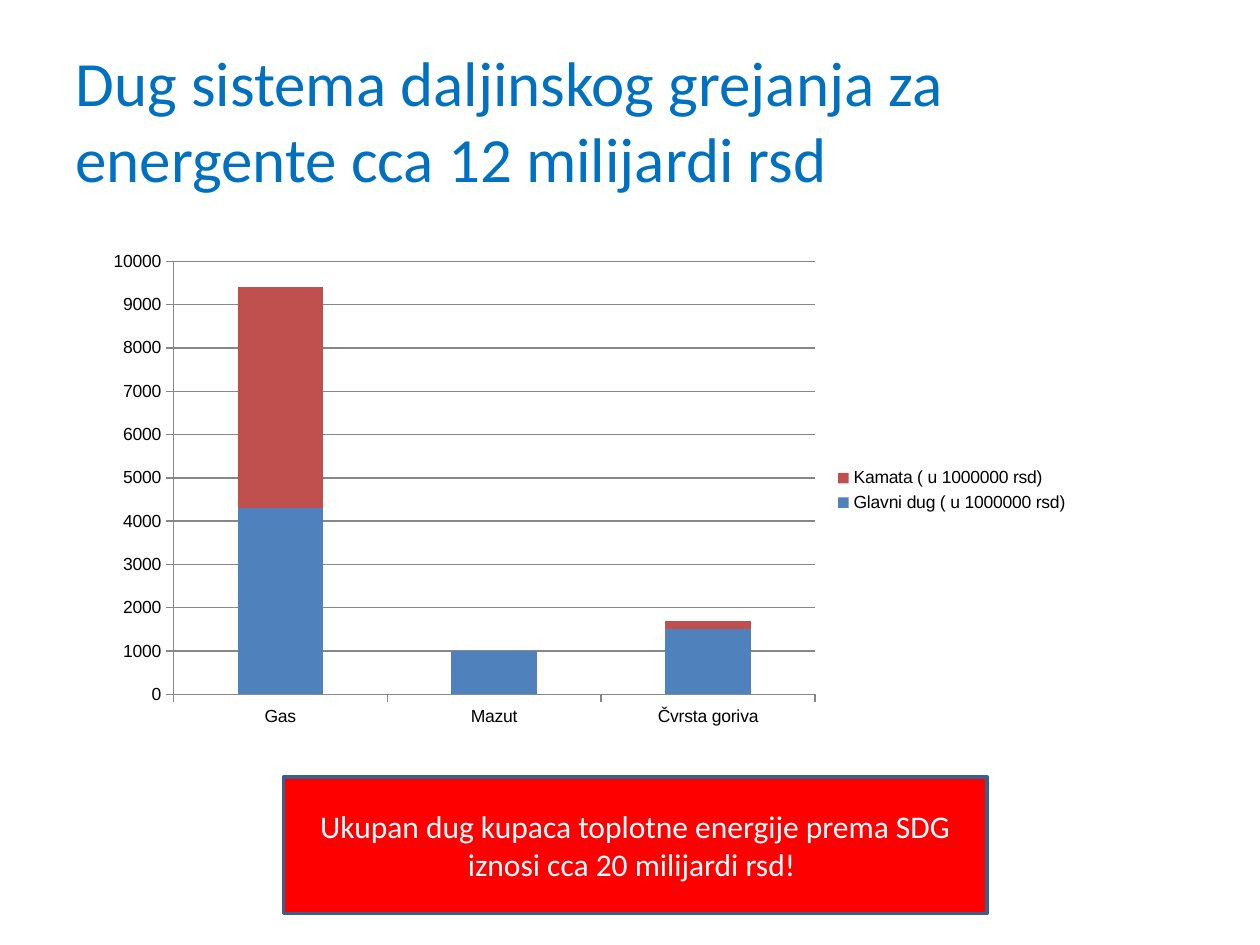
import pptx
import pptx.chart.data
import pptx.dml.color
import pptx.enum.chart
import pptx.enum.shapes
import pptx.enum.text
import pptx.oxml
import pptx.oxml.ns
import pptx.util

Pt = pptx.util.Pt
ALIGN = pptx.enum.text.PP_ALIGN
MIDDLE = pptx.enum.text.MSO_ANCHOR.MIDDLE
XL = pptx.enum.chart


def color(value):
    return pptx.dml.color.RGBColor.from_string(value)


def apply(target, values):
    for name, value in values.items():
        setattr(target, name, value)


class SlideBuilder:
    font = "Calibri"
    chart_font = "Arial"
    axis_color = "878787"
    frame = {"word_wrap": True, "vertical_anchor": MIDDLE,
             "margin_left": Pt(7.2), "margin_right": Pt(7.2),
             "margin_top": Pt(3.6), "margin_bottom": Pt(3.6)}

    def __init__(self, prs):
        self.s = prs.slides.add_slide(prs.slide_layouts[6])

    def set_text(self, sp, text, size, fill, align):
        tf = sp.text_frame
        apply(tf, self.frame)
        p = tf.paragraphs[0]
        p.alignment = align
        r = p.add_run()
        r.text = text
        apply(r.font, {"name": self.font, "size": Pt(size)})
        r.font.color.rgb = color(fill)

    def title(self, box, text, size, fill):
        sp = self.s.shapes.add_textbox(*map(Pt, box))
        self.set_text(sp, text, size, fill, ALIGN.LEFT)

    def callout(self, box, text, size, fill, line):
        sp = self.s.shapes.add_shape(
            pptx.enum.shapes.MSO_SHAPE.RECTANGLE, *map(Pt, box))
        sp.shadow.inherit = False
        sp.fill.solid()
        sp.fill.fore_color.rgb = color(fill)
        self.line(sp.line, line, 2)
        self.set_text(sp, text, size, "FFFFFF", ALIGN.CENTER)

    def line(self, line, value, width):
        line.color.rgb = color(value)
        line.width = Pt(width)

    def stacked_chart(self, box, categories, series, plot_area):
        data = pptx.chart.data.CategoryChartData()
        data.categories = categories
        for name, values, _ in series:
            data.add_series(name, values)
        chart = self.s.shapes.add_chart(
            XL.XL_CHART_TYPE.COLUMN_STACKED, *map(Pt, box), data).chart
        apply(chart, {"has_title": False, "has_legend": True})
        apply(chart.font, {"name": self.chart_font, "size": Pt(10)})
        chart.font.color.rgb = color("000000")
        apply(chart.legend, {"position": XL.XL_LEGEND_POSITION.RIGHT,
                             "include_in_layout": True})
        plot = chart.plots[0]
        apply(plot, {"gap_width": 150, "overlap": 100,
                     "vary_by_categories": False})
        for ser, (_, _, fill) in zip(plot.series, series):
            ser.format.fill.solid()
            ser.format.fill.fore_color.rgb = color(fill)
        for axis in (chart.category_axis, chart.value_axis):
            axis.major_tick_mark = XL.XL_TICK_MARK.OUTSIDE
            self.line(axis.format.line, self.axis_color, 0.75)
        apply(chart.value_axis, {"minimum_scale": 0, "maximum_scale": 10000,
                                 "major_unit": 1000,
                                 "has_major_gridlines": True})
        self.line(chart.value_axis.major_gridlines.format.line,
                  self.axis_color, 0.75)
        self.place_plot(chart, plot_area)

    def place_plot(self, chart, plot_area):
        parts = [("layoutTarget", "inner"), ("xMode", "edge"),
                 ("yMode", "edge"), *zip("xywh", plot_area)]
        inner = "".join(f'<c:{tag} val="{val}"/>' for tag, val in parts)
        layout = pptx.oxml.parse_xml(
            f'<c:layout {pptx.oxml.ns.nsdecls("c")}>'
            f"<c:manualLayout>{inner}</c:manualLayout></c:layout>")
        area = chart.element.chart.plotArea if hasattr(chart, "element") \
            else chart.plots[0]._element.getparent()
        for old in area.findall(pptx.oxml.ns.qn("c:layout")):
            area.remove(old)
        area.insert(0, layout)


def main():
    prs = pptx.Presentation()
    apply(prs, {"slide_width": Pt(720), "slide_height": Pt(540)})
    s = SlideBuilder(prs)
    s.title((36, 23, 648, 90),
            "Dug sistema daljinskog grejanja za energente cca 12 milijardi rsd",
            36, "0070C0")
    s.stacked_chart(
        (54, 138, 564, 284.5),
        ("Gas", "Mazut", "Čvrsta goriva"),
        (("Glavni dug ( u 1000000 rsd)", (4300, 1000, 1500), "4F81BD"),
         ("Kamata ( u 1000000 rsd)", (5100, 0, 200), "C0504D")),
        (0.08, 0.04, 0.65, 0.87))
    s.callout((162, 444, 402, 78),
              "Ukupan dug kupaca toplotne energije prema SDG "
              "iznosi cca 20 milijardi rsd! ",
              18, "FF0000", "3A5F8B")
    prs.save("out.pptx")


if __name__ == "__main__":
    main()
